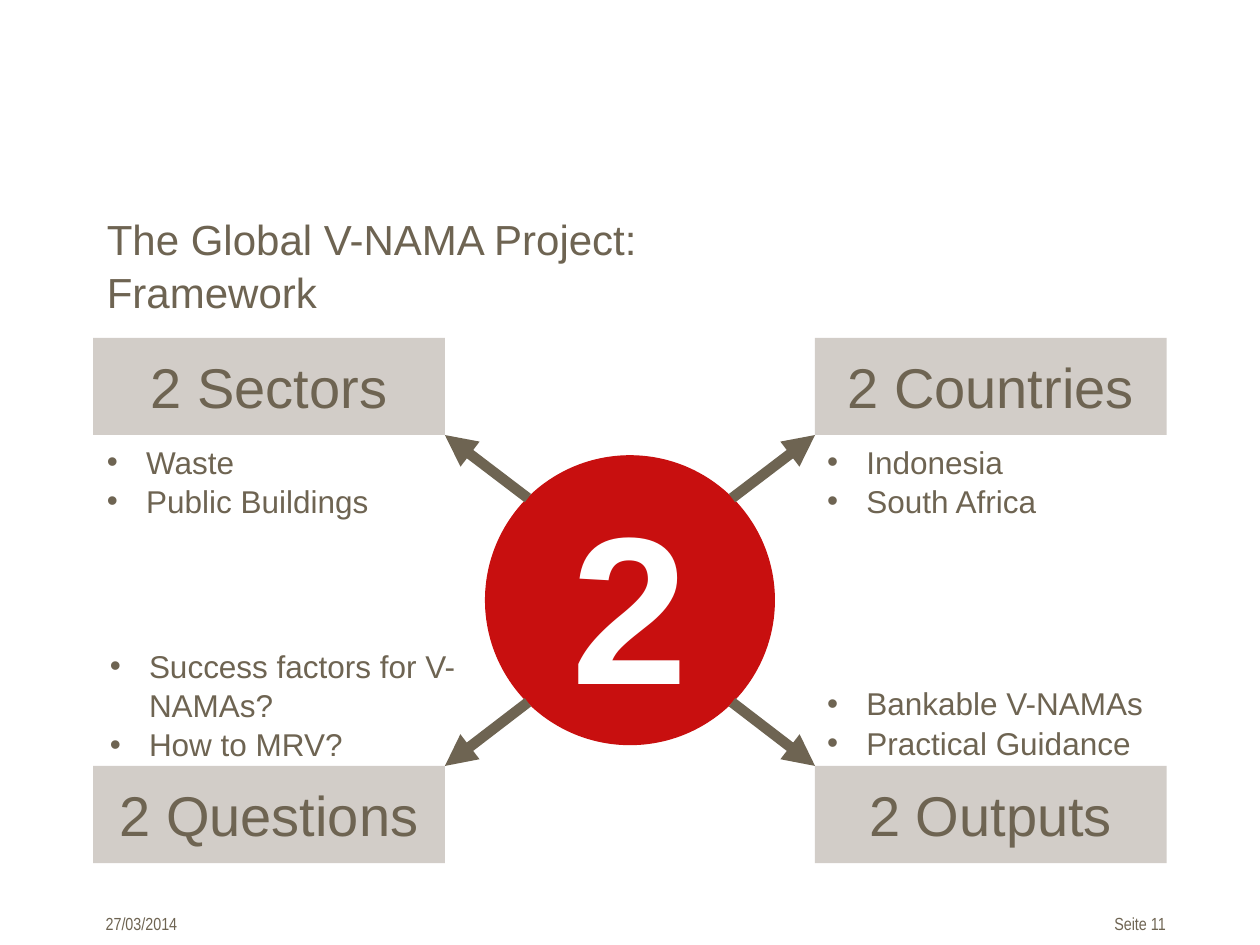
from math import sqrt

from lxml import etree
from pptx import Presentation
from pptx.dml.color import RGBColor
from pptx.enum import shapes, text
from pptx.oxml.ns import qn
from pptx.util import Cm, Pt

COLOURS = {"brown": "6E6452", "grey": "D2CDC8", "red": "C80F0F", "white": "FFFFFF"}

CENTRE_X, CENTRE_Y, RADIUS = 12.7, 12.1, 2.91
BOX_WIDTH, BOX_HEIGHT = 7.09, 1.96
LEFT, RIGHT = 1.88, 16.43
TOP, BOTTOM = 6.81, 15.44

# heading, heading left, heading top, list left, list top, list width, list height, items
TOPICS = [
    ("2 Sectors", LEFT, TOP, 1.9, 8.77, 7.06, 1.8, ["Waste", "Public Buildings"]),
    ("2 Countries", RIGHT, TOP, 16.42, 8.77, 7.06, 1.8, ["Indonesia", "South Africa"]),
    ("2 Questions", LEFT, BOTTOM, 1.96, 12.88, 7.85, 2.57,
     ["Success factors for V-NAMAs?", "How to MRV?"]),
    ("2 Outputs", RIGHT, BOTTOM, 16.42, 13.64, 7.06, 1.8,
     ["Bankable V-NAMAs", "Practical Guidance"]),
]


def colour(name):
    return RGBColor.from_string(COLOURS[name])


def place(shape, left, top, width, height):
    shape.left, shape.top = Cm(left), Cm(top)
    shape.width, shape.height = Cm(width), Cm(height)


def add_run(paragraph, wording, size, ink="brown", name="Arial", bold=False):
    run = paragraph.add_run()
    run.text = wording
    run.font.size, run.font.name, run.font.bold = Pt(size), name, bold
    run.font.color.rgb = colour(ink)


def prepare_frame(shape, anchor):
    frame = shape.text_frame
    frame.word_wrap = True
    frame.auto_size = text.MSO_AUTO_SIZE.NONE
    frame.vertical_anchor = anchor
    return frame


def write_title(title, lines):
    place(title, 1.9, 4.11, 21.6, 1.73)
    paragraph = prepare_frame(title, text.MSO_ANCHOR.TOP).paragraphs[0]
    paragraph.alignment = text.PP_ALIGN.LEFT
    paragraph.line_spacing = 1.06
    for index, line in enumerate(lines):
        if index:
            paragraph.add_line_break()
        add_run(paragraph, line, 24)


def add_bullet(paragraph):
    properties = paragraph._p.get_or_add_pPr()
    properties.set("marL", str(Cm(0.79)))
    properties.set("indent", str(-Cm(0.79)))
    etree.SubElement(properties, qn("a:buFont")).set("typeface", "Arial")
    etree.SubElement(properties, qn("a:buChar")).set("char", "•")


def write_list(body, items):
    frame = prepare_frame(body, text.MSO_ANCHOR.TOP)
    for index, item in enumerate(items):
        paragraph = frame.add_paragraph() if index else frame.paragraphs[0]
        add_bullet(paragraph)
        paragraph.line_spacing = 1.04
        paragraph.space_before = Pt(0)
        add_run(paragraph, item, 18)


def add_filled_shape(slide, kind, box, fill, wording, size, ink, bold=False):
    shape = slide.shapes.add_shape(kind, *map(Cm, box))
    shape.shadow.inherit = False
    shape.fill.solid()
    shape.fill.fore_color.rgb = colour(fill)
    paragraph = prepare_frame(shape, text.MSO_ANCHOR.MIDDLE).paragraphs[0]
    paragraph.alignment = text.PP_ALIGN.CENTER
    add_run(paragraph, wording, size, ink, bold=bold)
    return shape


def add_arrow(slide, *ends):
    arrow = slide.shapes.add_connector(shapes.MSO_CONNECTOR.STRAIGHT, *map(Cm, ends))
    arrow.line.color.rgb = colour("brown")
    arrow.line.width = Pt(6)
    etree.SubElement(arrow.line._get_or_add_ln(), qn("a:tailEnd")).set("type", "triangle")
    etree.SubElement(arrow._element.spPr, qn("a:effectLst"))


def add_footer(slide, wording, left, width, alignment, right_inset):
    box = slide.shapes.add_textbox(Cm(left), Cm(18.29), Cm(width), Cm(0.68))
    frame = prepare_frame(box, text.MSO_ANCHOR.TOP)
    frame.margin_right = Cm(right_inset)
    frame.paragraphs[0].alignment = alignment
    add_run(frame.paragraphs[0], wording, 10, name="Arial Narrow")


def main():
    presentation = Presentation()
    presentation.slide_width, presentation.slide_height = Cm(25.4), Cm(19.05)
    comparison_layout = presentation.slide_layouts[4]
    slide = presentation.slides.add_slide(comparison_layout)
    title, *bodies = slide.placeholders

    write_title(title, ["The Global V-NAMA Project:", "Framework"])
    add_footer(slide, "27/03/2014", LEFT, 3.6, text.PP_ALIGN.LEFT, 0.25)
    add_footer(slide, "Seite 11", 20.93, 2.57, text.PP_ALIGN.RIGHT, 0)

    circle = add_filled_shape(
        slide, shapes.MSO_SHAPE.OVAL,
        (CENTRE_X - RADIUS, CENTRE_Y - RADIUS, 2 * RADIUS, 2 * RADIUS),
        "red", "2", 120, "white", bold=True)
    circle.line.color.rgb = colour("red")
    circle.line.width = Pt(0.75)

    diagonal = RADIUS / sqrt(2)
    for body, topic in zip(bodies, TOPICS):
        heading, left, top, *list_box, items = topic
        box = add_filled_shape(slide, shapes.MSO_SHAPE.RECTANGLE,
                               (left, top, BOX_WIDTH, BOX_HEIGHT),
                               "grey", heading, 32, "brown")
        box.line.fill.background()
        side = -1 if left == LEFT else 1
        level = -1 if top == TOP else 1
        add_arrow(slide, CENTRE_X + side * diagonal, CENTRE_Y + level * diagonal,
                  left + BOX_WIDTH if side < 0 else left,
                  top + BOX_HEIGHT if level < 0 else top)
        place(body, *list_box)
        write_list(body, items)

    presentation.save("out.pptx")


if __name__ == "__main__":
    main()
